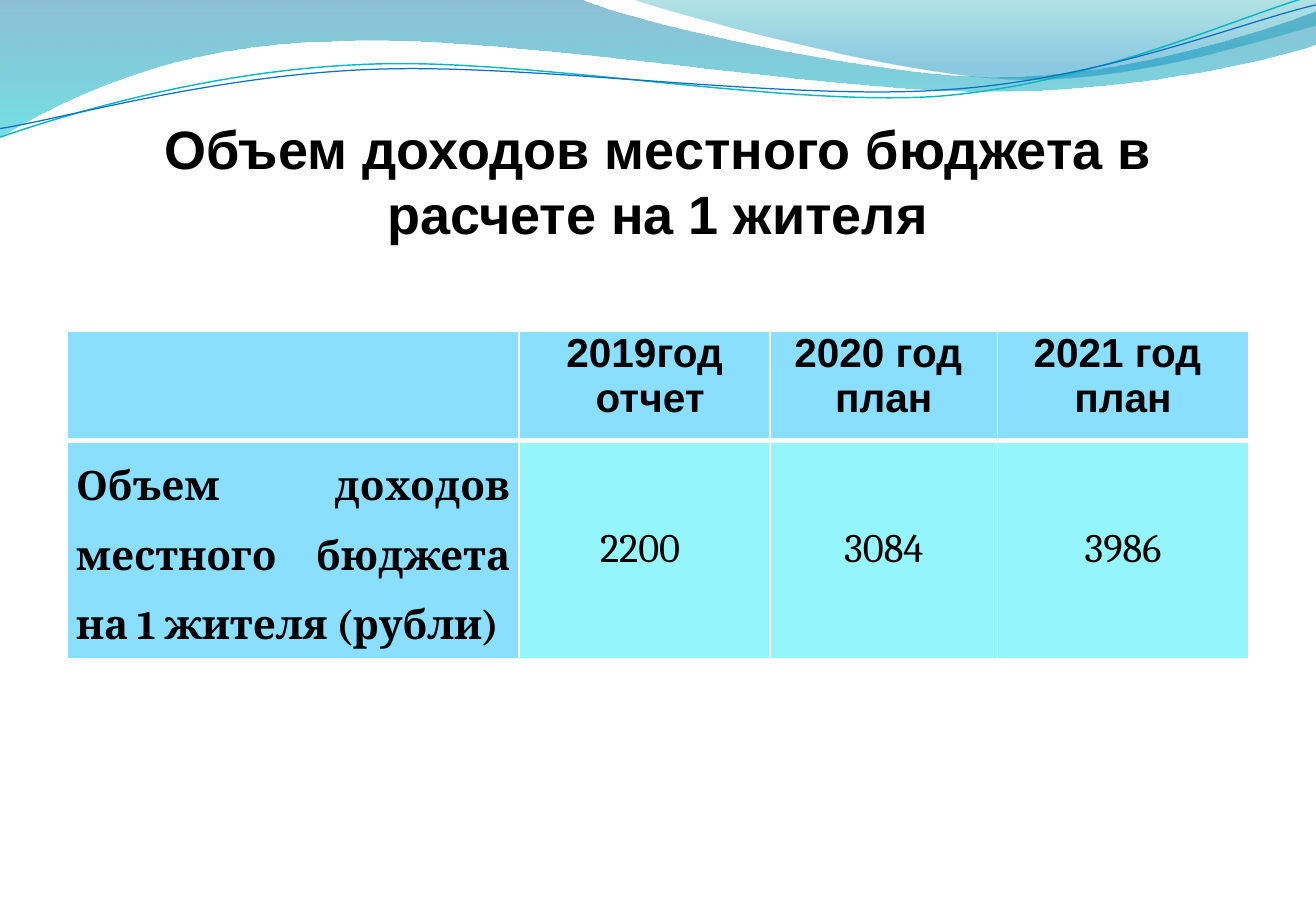
import lxml.etree
import pptx
import pptx.dml.color
import pptx.enum.text
import pptx.oxml
import pptx.oxml.ns
import pptx.util

Cm, Pt = pptx.util.Cm, pptx.util.Pt
ALIGN = pptx.enum.text.PP_ALIGN
ANCHOR = pptx.enum.text.MSO_ANCHOR
qn = pptx.oxml.ns.qn


def color(value):
    return pptx.dml.color.RGBColor.from_string(value)


def add_wave(start, segments, close):
    """Draw a freeform; one point makes a line, three make a Bezier curve."""
    builder = slide.shapes.build_freeform(Cm(start[0]), Cm(start[1]))
    ends = [segment[-1] for segment in segments]
    builder.add_line_segments([(Cm(x), Cm(y)) for x, y in ends], close=close)
    shape = builder.convert_to_shape()
    shape.shadow.inherit = False
    lines = list(shape._element.spPr.iter(qn("a:lnTo")))
    for line, segment in zip(lines, segments):
        if len(segment) == 3:
            curve = lxml.etree.Element(qn("a:cubicBezTo"))
            for x, y in segment:
                point = lxml.etree.SubElement(curve, qn("a:pt"))
                point.set("x", str(Cm(x) - shape.left))
                point.set("y", str(Cm(y) - shape.top))
            line.getparent().replace(line, curve)
    return shape


presentation = pptx.Presentation()
presentation.slide_width, presentation.slide_height = Cm(27.51), Cm(19.05)
slide = presentation.slides.add_slide(presentation.slide_layouts[6])

# Translucent waves: start, segments, gradient stops (position, colour, opacity %)
bands = [
    ((0, -0.03),
     [[(12.12, -0.03)],
      [(13.08, 0.43), (18.26, 1.6), (20.88, 1.6)],
      [(23.47, 1.6), (26.37, 0.66), (27.51, 0.23)],
      [(27.56, 0.91)],
      [(27.05, 1.12), (23.93, 1.93), (20.52, 1.91)],
      [(17.12, 1.91), (10.52, 0.71), (7.09, 0.86)],
      [(3.56, 0.89), (1.27, 2.11), (-0.03, 2.87)]],
     [(0, "0074A1", 45), (1, "00C6CF", 55)]),
    ((13.18, -0.03),
     [[(14.02, 0.28), (18.77, 1.57), (21.16, 1.65)],
      [(23.55, 1.75), (26.47, 0.81), (27.51, 0.53)],
      [(27.51, 0)]],
     [(0, "00A1A9", 30), (0.8, "008BBF", 45)]),
]
for start, segments, stops in bands:
    band = add_wave(start, segments, True)
    band.line.fill.background()
    band.fill.gradient()
    band.fill.gradient_angle = 270
    for stop, (position, value, opacity) in zip(band.fill.gradient_stops, stops):
        stop.position = position
        stop.color.rgb = color(value)
    for element, (_, _, opacity) in zip(band._element.spPr.iter(qn("a:srgbClr")), stops):
        lxml.etree.SubElement(element, qn("a:alpha")).set("val", str(opacity * 1000))

# Thin wave lines, tilted slightly
strokes = [
    ((-0.05, 2.22),
     [[(1.29, 1.83), (4.35, 1.03), (7.63, 1.06)],
      [(10.89, 1.05), (16.27, 2.36), (19.58, 2.29)],
      [(22.89, 2.18), (25.87, 0.93), (27.52, 0.55)]], "0AB8BF", 0.85),
    ((-0.04, 2.04),
     [[(1.27, 1.9), (4.51, 1.13), (7.81, 1.17)],
      [(11.08, 1.19), (16.4, 2.24), (19.69, 2.16)],
      [(22.99, 2.12), (25.94, 1.05), (27.56, 0.75)]], "0F6FC6", 0.75),
]
for start, segments, value, width in strokes:
    stroke = add_wave(start, segments, False)
    stroke.rotation = 357.3
    stroke.fill.background()
    stroke.line.color.rgb = color(value)
    stroke.line.width = Pt(width)

# Title
title = slide.shapes.add_textbox(Cm(1.37), Cm(1.95), Cm(24.77), Cm(3.18)).text_frame
title.word_wrap = True
title.vertical_anchor = ANCHOR.BOTTOM
title.margin_left = title.margin_right = title.margin_bottom = 0
title.text = "Объем доходов местного бюджета в расчете на 1 жителя"
paragraph = title.paragraphs[0]
paragraph.alignment = ALIGN.CENTER
paragraph.font.name, paragraph.font.size, paragraph.font.bold = "Arial", Pt(32), True
paragraph.font.color.rgb = color("000000")

# Income table
rows = [
    ["", "2019год\n отчет", "2020 год \nплан", "2021 год \nплан"],
    ["Объем доходов местного бюджета на 1 жителя (рубли)", "2200 ", "3084", "3986"],
]
table = slide.shapes.add_table(2, 4, Cm(1.41), Cm(6.92), Cm(24.69), Cm(6.86)).table
table.horz_banding = False
for column, width in zip(table.columns, (9.44, 5.25, 4.75, 5.25)):
    column.width = Cm(width)
for row, height in zip(table.rows, (2.29, 4.57)):
    row.height = Cm(height)

for row_index, texts in enumerate(rows):
    for column_index, text in enumerate(texts):
        cell = table.cell(row_index, column_index)
        is_header, is_label = row_index == 0, column_index == 0
        cell.text = text
        cell.margin_left = cell.margin_right = Cm(0.18)
        cell.margin_top = cell.margin_bottom = 0
        cell.vertical_anchor = ANCHOR.TOP if is_header or is_label else ANCHOR.MIDDLE
        for paragraph in cell.text_frame.paragraphs:
            paragraph.alignment = ALIGN.CENTER
            if is_label and not is_header:
                paragraph.alignment = ALIGN.JUSTIFY
                paragraph.line_spacing = 1.5
            paragraph.font.name = "Arial" if is_header else "Cambria"
            paragraph.font.size = Pt(24)
            paragraph.font.bold = is_header or is_label
            paragraph.font.color.rgb = color("000000")
        # White borders, thicker under the header
        thick_side = "lnB" if is_header else "lnT"
        properties = cell._tc.get_or_add_tcPr()
        for side in ("lnL", "lnR", "lnT", "lnB"):
            border = lxml.etree.SubElement(properties, qn("a:" + side))
            border.set("w", str(Pt(3 if side == thick_side else 1)))
            fill = lxml.etree.SubElement(border, qn("a:solidFill"))
            lxml.etree.SubElement(fill, qn("a:srgbClr")).set("val", "FFFFFF")
        cell.fill.solid()
        cell.fill.fore_color.rgb = color("8ADFFF" if is_header or is_label else "94F5FA")

presentation.save("out.pptx")
